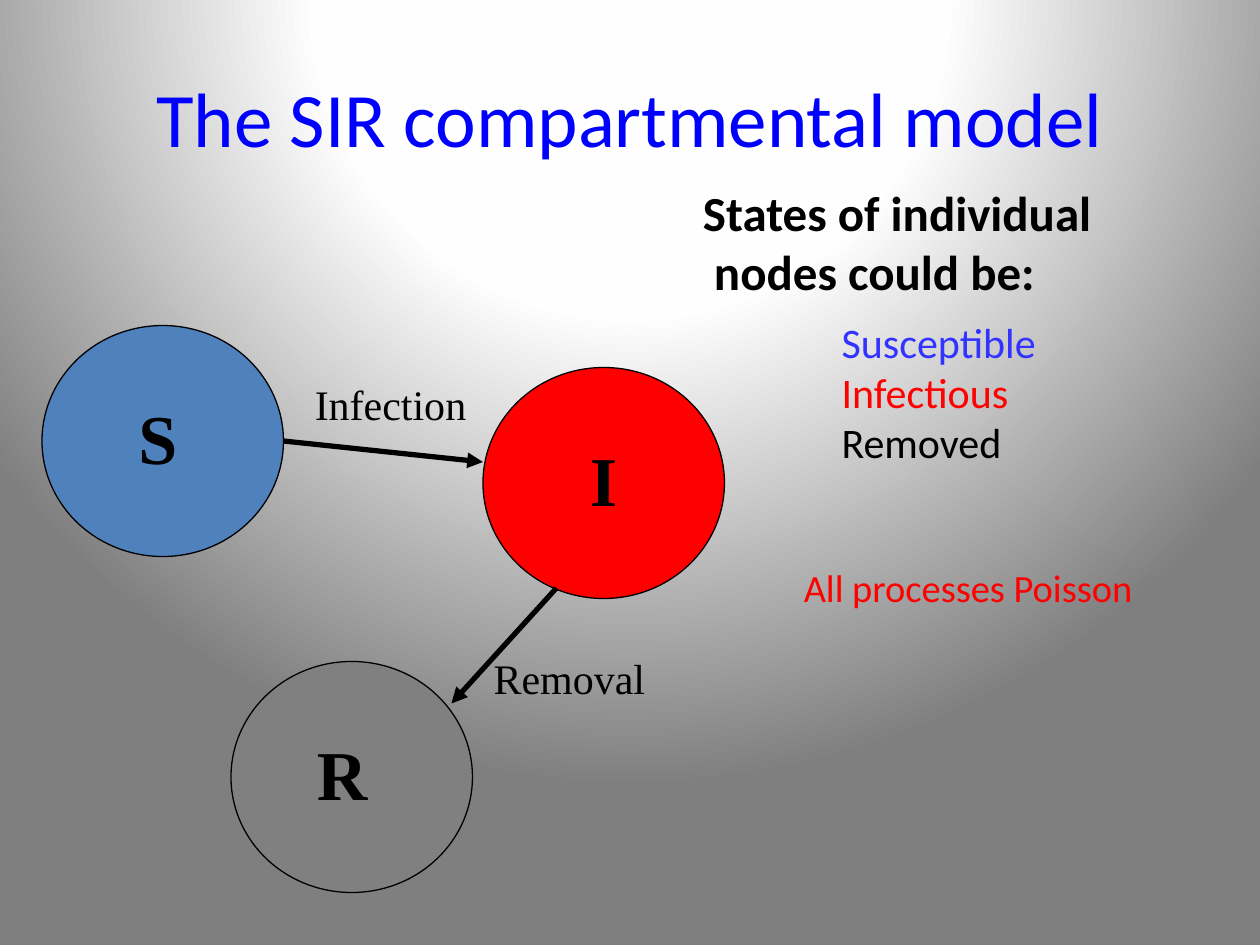
from lxml import etree
from pptx import Presentation
from pptx.dml.color import RGBColor
from pptx.enum.shapes import MSO_CONNECTOR, MSO_SHAPE
from pptx.enum.text import MSO_ANCHOR, MSO_AUTO_SIZE, PP_ALIGN
from pptx.oxml import parse_xml
from pptx.oxml.ns import nsdecls, qn
from pptx.util import Pt

ELLIPSE = MSO_SHAPE.OVAL
STRAIGHT = MSO_CONNECTOR.STRAIGHT
MIDDLE, TOP = MSO_ANCHOR.MIDDLE, MSO_ANCHOR.TOP
CENTER, LEFT = PP_ALIGN.CENTER, PP_ALIGN.LEFT
GROW = MSO_AUTO_SIZE.SHAPE_TO_FIT_TEXT

SANS, SERIF = "Calibri", "Times New Roman"
BLACK, RED = "000000", "FF0000"
NODE_WIDTH, NODE_HEIGHT = 138, 132


def color(hex_code):
    return RGBColor.from_string(hex_code)


def add_text(slide, box, lines, size, font, bold=False, wrap=False,
             align=LEFT, anchor=TOP, grow=True):
    """Place (text, colour) lines in a box of left, top, width, height."""
    frame = slide.shapes.add_textbox(*map(Pt, box)).text_frame
    frame.word_wrap = wrap
    frame.vertical_anchor = anchor
    if grow:
        frame.auto_size = GROW
    frame.text = "\n".join(text for text, _ in lines)
    for paragraph, (_, hex_code) in zip(frame.paragraphs, lines):
        paragraph.alignment = align
        run_font = paragraph.runs[0].font
        run_font.name = font
        run_font.size = Pt(size)
        run_font.bold = bold
        run_font.color.rgb = color(hex_code)


def add_background(slide):
    # Radial gradient centred above the slide
    stops = "".join(
        f'<a:gs pos="{percent * 1000}"><a:srgbClr val="{hex_code}"/></a:gs>'
        for percent, hex_code in [(0, "FFFFFF"), (40, "FEFEFE"), (100, "7F7F7F")])
    background = parse_xml(
        f'<p:bg {nsdecls("p", "a")}><p:bgPr><a:gradFill rotWithShape="1">'
        f'<a:gsLst>{stops}</a:gsLst><a:path path="circle">'
        '<a:fillToRect l="50000" t="-80000" r="50000" b="180000"/></a:path>'
        '</a:gradFill><a:effectLst/></p:bgPr></p:bg>')
    slide.element.cSld.insert(0, background)


def add_title(slide, box):
    add_text(slide, box, [("The SIR compartmental model", "0000FF")], 44, SANS,
             wrap=True, align=CENTER, anchor=MIDDLE, grow=False)


def add_node(slide, left, top, fill):
    node = slide.shapes.add_shape(ELLIPSE, Pt(left), Pt(top),
                                  Pt(NODE_WIDTH), Pt(NODE_HEIGHT))
    node.shadow.inherit = False
    node.fill.solid()
    node.fill.fore_color.rgb = color(fill)
    node.line.color.rgb = color(BLACK)
    node.line.width = Pt(0.75)


def add_arrow(slide, start, end):
    arrow = slide.shapes.add_connector(STRAIGHT, *map(Pt, start + end))
    arrow.line.color.rgb = color(BLACK)
    arrow.line.width = Pt(3)
    etree.SubElement(arrow.line._get_or_add_ln(), qn("a:tailEnd"), type="triangle")
    etree.SubElement(arrow.element.spPr, qn("a:effectLst"))


def add_diagram(slide, left, top):
    """Nodes, arrows and labels, offset from the diagram's top left."""
    # Circles with their letters: x, y, fill, letter, letter x, y, width
    nodes = [(0, 0, "4F81BD", "S", 48, 36, 36.7),
             (252, 24, RED, "I", 54, 36, 30.2),
             (108, 192, "808080", "R", 42, 36, 54)]
    for x, y, fill, *_ in nodes:
        add_node(slide, left + x, top + y, fill)
    for x, y, _, letter, letter_x, letter_y, width in nodes:
        add_text(slide, (left + x + letter_x, top + y + letter_y, width, 55.4),
                 [(letter, BLACK)], 40, SERIF, bold=True, wrap=letter == "R")

    # Transitions: start, end, label and its corner
    transitions = [((138, 66), (252, 78), "Infection", (148.8, 27)),
                   ((294, 150), (234, 216), "Removal", (251, 183.4))]
    for start, end, label, (x, y) in transitions:
        add_arrow(slide, (left + start[0], top + start[1]),
                  (left + end[0], top + end[1]))
        add_text(slide, (left + x, top + y, 100.8, 36), [(label, BLACK)], 24, SERIF)


def add_states(slide, left, top):
    """Heading, list of states and remark in the right-hand column."""
    add_text(slide, (left + 57.6, top + 218.2, 221.8, 33.8),
             [("All processes Poisson", RED)], 22, SANS, wrap=True)
    add_text(slide, (left + 79.2, top + 76.3, 126.7, 138.2),
             [("Susceptible", "3333FF"), ("Infectious", RED), ("Removed", BLACK)],
             24, SANS)
    add_text(slide, (left, top, 239, 108.7),
             [("States of individual", BLACK), (" nodes could be:", BLACK)],
             28, SANS, bold=True)


def main():
    deck = Presentation()
    deck.slide_width, deck.slide_height = Pt(720), Pt(540)
    slide = deck.slides.add_slide(deck.slide_layouts[6])
    add_background(slide)
    add_title(slide, (36, 21.6, 648, 90))
    add_diagram(slide, 24, 186)
    add_states(slide, 394.6, 100.8)
    deck.save("out.pptx")


if __name__ == "__main__":
    main()
